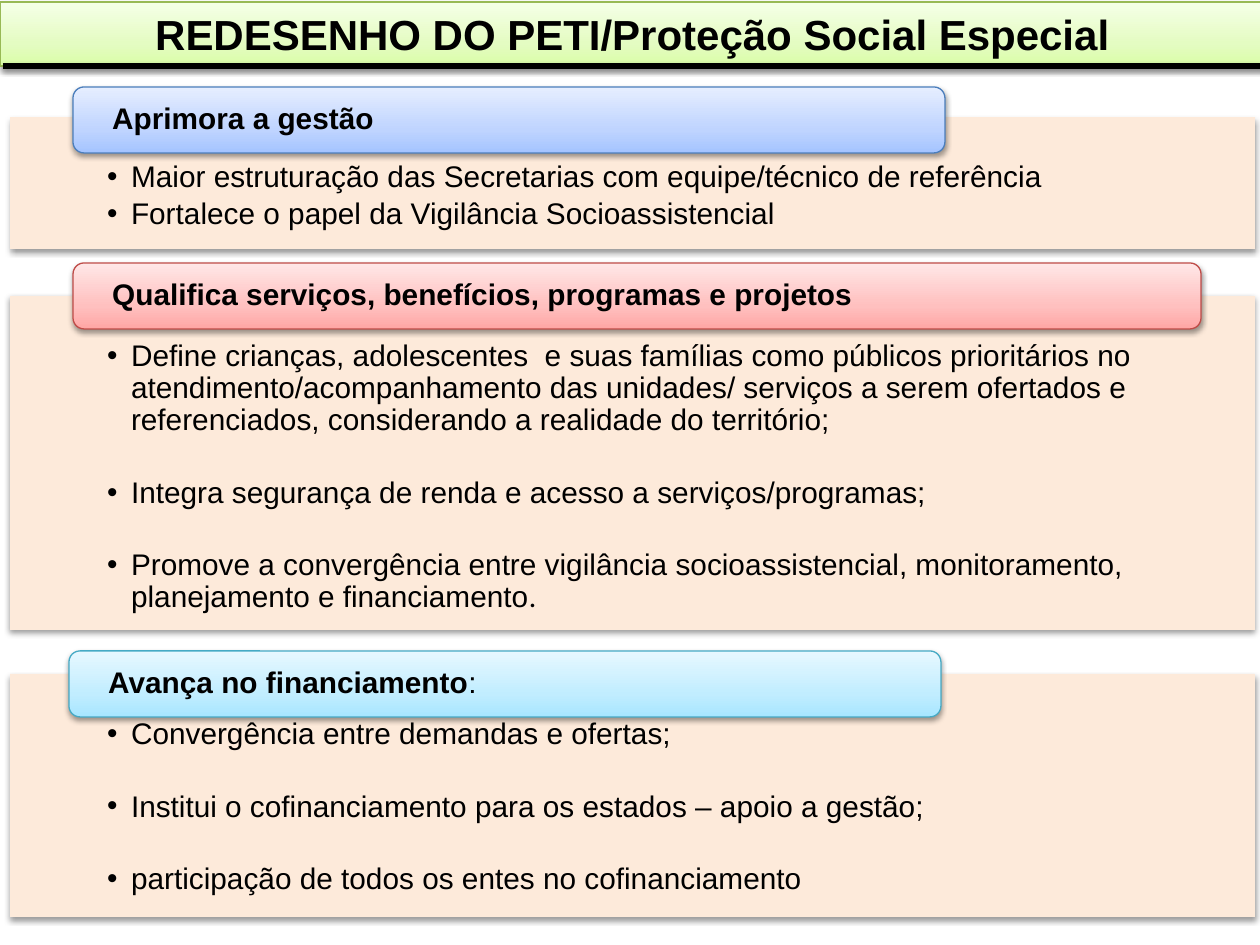
from copy import deepcopy

from lxml import etree
from pptx import Presentation
from pptx import util as u
from pptx.dml.color import RGBColor
from pptx.enum import shapes, text
from pptx.oxml import ns

PX = u.Inches(1) // 126
BLACK = "000000"
PEACH = "FDEADA"


def px(length):
    return u.Emu(length * PX)


def color(hex_code):
    return RGBColor.from_string(hex_code)


def add_xml(parent, tag, **attributes):
    return etree.SubElement(parent, ns.qn(tag), attributes)


class SlideBuilder:
    font = "Arial"
    body_size = 17
    title_size = 24

    def __init__(self, slide):
        self.slide = slide

    def drop_shadow(self, element, alpha=38):
        """Fill the element's effect list with a soft shadow pointing down."""
        properties = element.spPr
        effects = properties.find(ns.qn("a:effectLst"))
        if effects is None:
            effects = add_xml(properties, "a:effectLst")
        shadow = add_xml(effects, "a:outerShdw", blurRad=str(u.Pt(3.1)),
                         dist=str(u.Pt(1.6)), dir="5400000", rotWithShape="0")
        shade = add_xml(shadow, "a:srgbClr", val=BLACK)
        add_xml(shade, "a:alpha", val=str(alpha * 1000))

    def gradient(self, shape, colors, border):
        """Run three colours from bottom to top, with a thin border."""
        shape.fill.gradient()
        shape.fill.gradient_angle = 90
        stop_list = shape._element.spPr.find(".//" + ns.qn("a:gsLst"))
        stop_list.insert(1, deepcopy(stop_list[0]))
        for stop, place, shade in zip(shape.fill.gradient_stops, (0, 0.35, 1), colors):
            stop.position = place
            stop.color.rgb = color(shade)
        shape.line.color.rgb = color(border)
        shape.line.width = u.Pt(0.75)
        shape.shadow.inherit = False
        self.drop_shadow(shape._element)

    def style_run(self, run, size, bold=False, font=None):
        run.font.name = font or self.font
        run.font.size = u.Pt(size)
        run.font.bold = bold
        run.font.color.rgb = color(BLACK)

    def frame(self, shape, insets, anchor):
        frame = shape.text_frame
        frame.word_wrap = True
        frame.vertical_anchor = anchor
        (frame.margin_left, frame.margin_top,
         frame.margin_right, frame.margin_bottom) = map(px, insets)
        return frame

    def shape(self, kind, left, top, width, height):
        return self.slide.shapes.add_shape(kind, px(left), px(top), px(width), px(height))

    def title(self, wording, left, top, width, height, colors, border):
        title = self.slide.shapes.title
        title.left, title.top, title.width, title.height = map(px, (left, top, width, height))
        self.gradient(title, colors, border)
        frame = self.frame(title, (12, 6, 12, 6), text.MSO_ANCHOR.MIDDLE)
        frame.text = wording
        frame.paragraphs[0].alignment = text.PP_ALIGN.CENTER
        self.style_run(frame.paragraphs[0].runs[0], self.title_size, bold=True)

    def rule(self, left, right, y):
        rule = self.slide.shapes.add_connector(
            shapes.MSO_CONNECTOR.STRAIGHT, px(left), px(y), px(right), px(y))
        rule.line.color.rgb = color(BLACK)
        rule.line.width = u.Pt(3)
        self.drop_shadow(rule._element, alpha=35)

    def panel(self, top, height, points, gap, ending=""):
        """Draw a bulleted panel; the ending closes the last point in Calibri."""
        panel = self.shape(shapes.MSO_SHAPE.RECTANGLE, 10, top, 1245, height)
        panel.fill.solid()
        panel.fill.fore_color.rgb = color(PEACH)
        panel.line.fill.background()
        panel.shadow.inherit = False
        self.drop_shadow(panel._element)
        frame = self.frame(panel, (97, 45, 97, 16), text.MSO_ANCHOR.TOP)
        frame.text = "\n".join(points)
        for paragraph in frame.paragraphs:
            paragraph.alignment = text.PP_ALIGN.LEFT
            paragraph.line_spacing = 0.9
            paragraph.space_after = u.Pt(gap)
            properties = paragraph._p.get_or_add_pPr()
            properties.set("marL", str(px(24)))
            properties.set("indent", str(px(-24)))
            add_xml(properties, "a:buFont", typeface=self.font)
            add_xml(properties, "a:buChar", char="•")
            self.style_run(paragraph.runs[0], self.body_size)
        if ending:
            run = frame.paragraphs[-1].add_run()
            run.text = ending
            self.style_run(run, self.body_size, font="Calibri")

    def heading(self, wording, left, top, width, colors, border, ending=""):
        """Draw a rounded heading; the ending follows in regular weight."""
        heading = self.shape(shapes.MSO_SHAPE.ROUNDED_RECTANGLE, left, top, width, 66)
        self.gradient(heading, colors, border)
        frame = self.frame(heading, (36, 0, 36, 0), text.MSO_ANCHOR.MIDDLE)
        paragraph = frame.paragraphs[0]
        paragraph.alignment = text.PP_ALIGN.LEFT
        paragraph.line_spacing = 0.9
        for part, bold in ((wording, True), (ending, False)):
            if part:
                run = paragraph.add_run()
                run.text = part
                self.style_run(run, self.body_size, bold)


SECTIONS = [
    (dict(top=117, height=132, gap=2.5, points=[
        "Maior estruturação das Secretarias com equipe/técnico de referência",
        "Fortalece o papel da Vigilância Socioassistencial"]),
     dict(wording="Aprimora a gestão", left=73, top=87, width=872,
          colors=("A4C4FF", "BFD4FF", "E6EEFF"), border="4B7EBC")),
    (dict(top=296, height=334, gap=23, ending=".", points=[
        "Define crianças, adolescentes  e suas famílias como públicos prioritários no "
        "atendimento/acompanhamento das unidades/ serviços a serem ofertados e "
        "referenciados, considerando a realidade do território;",
        "Integra segurança de renda e acesso a serviços/programas;",
        "Promove a convergência entre vigilância socioassistencial, monitoramento, "
        "planejamento e financiamento"]),
     dict(wording="Qualifica serviços, benefícios, programas e projetos",
          left=73, top=263, width=1128,
          colors=("FFA6A5", "FFC0BF", "FFE7E7"), border="BF4C48")),
    (dict(top=674, height=243, gap=23, points=[
        "Convergência entre demandas e ofertas;",
        "Institui o cofinanciamento para os estados – apoio a gestão;",
        "participação de todos os entes no cofinanciamento"]),
     dict(wording="Avança no financiamento", ending=":", left=69, top=651, width=872,
          colors=("A7E6FF", "C1EDFF", "E7F8FF"), border="46AAC5")),
]


def main():
    deck = Presentation()
    deck.slide_width, deck.slide_height = px(1260), px(945)
    builder = SlideBuilder(deck.slides.add_slide(deck.slide_layouts[5]))
    for panel, heading in SECTIONS:
        builder.panel(**panel)
        builder.heading(**heading)
    builder.title("REDESENHO DO PETI/Proteção Social Especial", 0, 2, 1265, 64,
                  ("DAFDA7", "E4FCC2", "F5FFE7"), "98B955")
    builder.rule(3, 1263, 66)
    deck.save("out.pptx")


if __name__ == "__main__":
    main()
